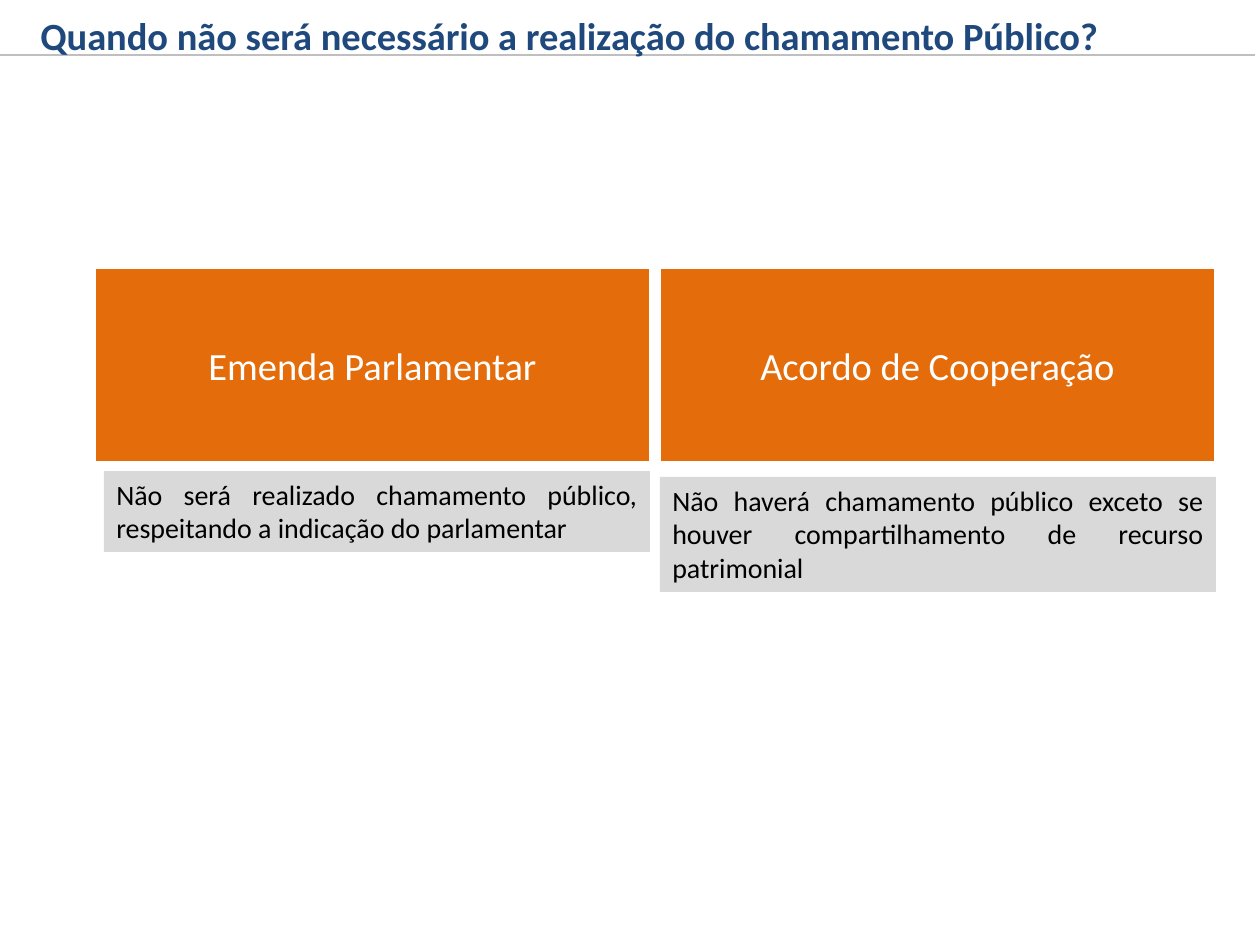
from lxml import etree
from pptx import Presentation
from pptx.dml.color import RGBColor
from pptx.enum.shapes import MSO_CONNECTOR, MSO_SHAPE
from pptx.enum.text import MSO_ANCHOR, MSO_AUTO_SIZE, PP_ALIGN
from pptx.oxml.ns import qn
from pptx.util import Pt

PX = 914400 // 126
RECTANGLE = MSO_SHAPE.RECTANGLE
STRAIGHT = MSO_CONNECTOR.STRAIGHT
MIDDLE, TOP = MSO_ANCHOR.MIDDLE, MSO_ANCHOR.TOP
CENTER, JUSTIFY, LEFT = PP_ALIGN.CENTER, PP_ALIGN.JUSTIFY, PP_ALIGN.LEFT
FIT_SHAPE = MSO_AUTO_SIZE.SHAPE_TO_FIT_TEXT


def color(value):
    return RGBColor.from_string(value)


def write(shape, text, size, text_color, align, anchor, bold=False):
    frame = shape.text_frame
    frame.text = text
    frame.vertical_anchor = anchor
    para = frame.paragraphs[0]
    para.alignment = align
    font = para.runs[0].font
    font.name = "Calibri"
    font.size = Pt(size)
    font.bold = bold
    font.color.rgb = color(text_color)


deck = Presentation()
deck.slide_width, deck.slide_height = 1260 * PX, 945 * PX
page = deck.slides.add_slide(deck.slide_layouts[6])

rule = page.shapes.add_connector(STRAIGHT, -5 * PX, 55 * PX, 1255 * PX, 55 * PX)
rule.line.color.rgb = color("BFBFBF")
rule.line.width = Pt(0.75)
etree.SubElement(rule.element.spPr, qn("a:effectLst"))

title = page.shapes.add_textbox(28 * PX, 6 * PX, 1097 * PX, 59 * PX)
write(title, "Quando não será necessário a realização do chamamento Público?",
      22, "1F497D", LEFT, TOP, bold=True)
title.text_frame.word_wrap = False
title.text_frame.auto_size = FIT_SHAPE

# heading, heading left, note, note (left, top, width, height)
columns = [
    ("Emenda Parlamentar", 95,
     "Não será realizado chamamento público, respeitando a indicação do parlamentar",
     (104, 471, 546, 81)),
    ("Acordo de Cooperação", 660,
     "Não haverá chamamento público exceto se houver compartilhamento de recurso patrimonial",
     (660, 477, 556, 115)),
]
for heading, left, note, note_place in columns:
    card = page.shapes.add_shape(RECTANGLE, left * PX, 268 * PX, 555 * PX, 194 * PX)
    card.shadow.inherit = False
    card.fill.solid()
    card.fill.fore_color.rgb = color("E46C0A")
    card.line.color.rgb = color("FFFFFF")
    card.line.width = Pt(0.75)
    write(card, heading, 22, "FFFFFF", CENTER, MIDDLE)

    box = page.shapes.add_shape(RECTANGLE, *[length * PX for length in note_place])
    box.shadow.inherit = False
    box.fill.solid()
    box.fill.fore_color.rgb = color("D9D9D9")
    box.line.fill.background()
    write(box, note, 16, "000000", JUSTIFY, TOP)
    box.text_frame.word_wrap = True
    box.text_frame.auto_size = FIT_SHAPE

deck.save("out.pptx")
